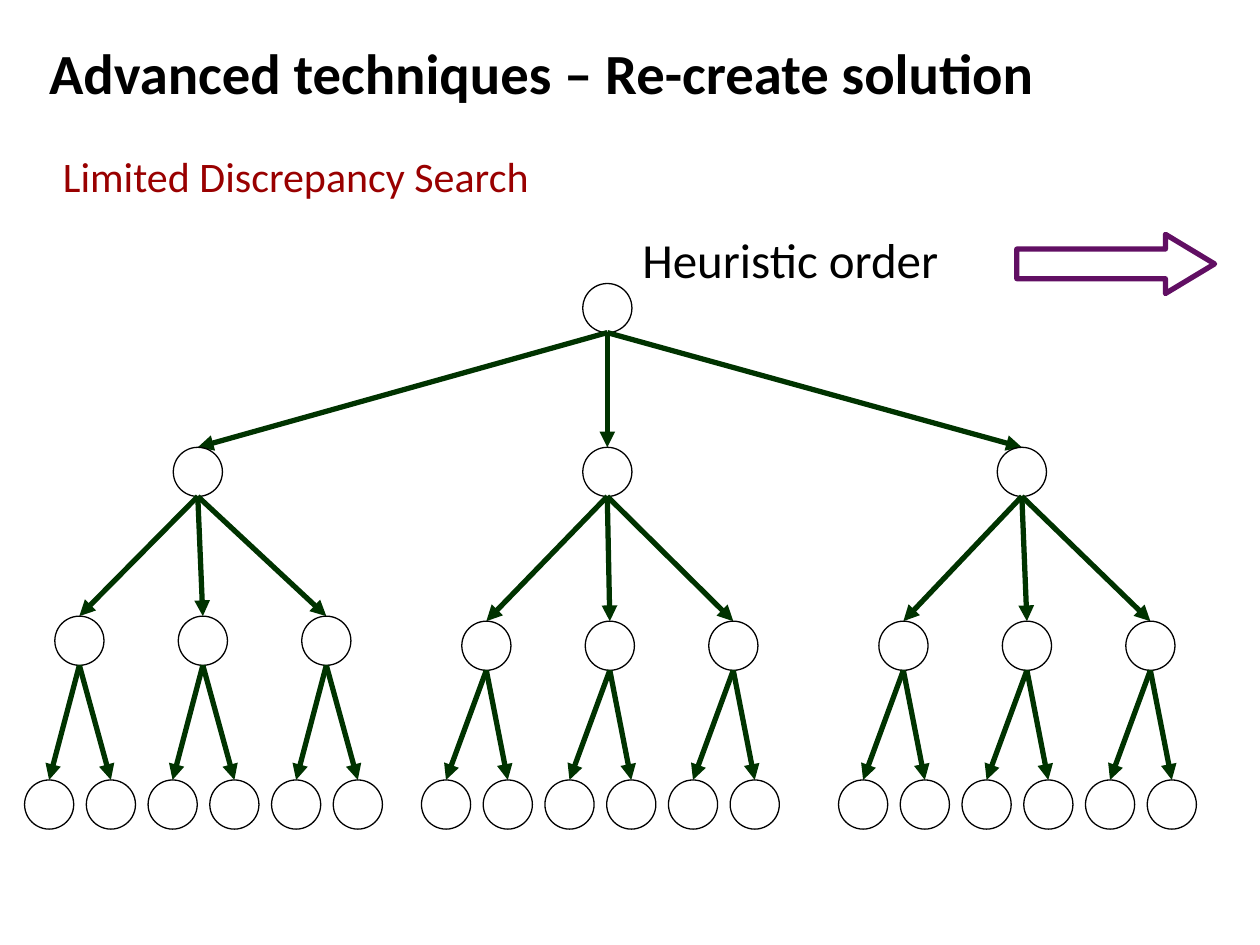
from dataclasses import dataclass

from lxml.etree import SubElement
from pptx import Presentation
from pptx.dml.color import RGBColor
from pptx.enum.shapes import MSO_CONNECTOR, MSO_SHAPE
from pptx.enum.text import MSO_ANCHOR
from pptx.oxml.ns import qn
from pptx.util import Inches, Pt


@dataclass(frozen=True)
class Theme:
    font: str = "Calibri"
    ink: str = "000000"
    heading: str = "990000"
    branch: str = "003300"
    arrow: str = "610F63"
    title_size: float = 32.4
    heading_size: float = 24
    label_size: float = 28
    thin: float = 0.75
    thick: float = 3


class TreeSlide:
    def __init__(self, page, theme):
        self.page = page
        self.theme = theme

    def text(self, words, left, top, width, height, size, color,
             bold=False, inset=(0, 0), spacing=None):
        box = self.page.shapes.add_textbox(
            Inches(left), Inches(top), Inches(width), Inches(height))
        frame = box.text_frame
        frame.word_wrap = True
        frame.vertical_anchor = MSO_ANCHOR.TOP
        frame.margin_left = frame.margin_right = Inches(inset[0])
        frame.margin_top = frame.margin_bottom = Inches(inset[1])
        para = frame.paragraphs[0]
        if spacing:
            para.line_spacing = spacing
        span = para.add_run()
        span.text = words
        span.font.name = self.theme.font
        span.font.size = Pt(size)
        span.font.bold = bold
        span.font.color.rgb = RGBColor.from_string(color)

    def outline(self, kind, left, top, width, height, color, weight):
        shape = self.page.shapes.add_shape(
            kind, Inches(left), Inches(top), Inches(width), Inches(height))
        shape.shadow.inherit = False
        shape.fill.background()
        shape.line.color.rgb = RGBColor.from_string(color)
        shape.line.width = Pt(weight)
        return shape

    def node(self, center, top):
        self.outline(MSO_SHAPE.OVAL, center - NODE / 2, top, NODE, NODE,
                     self.theme.ink, self.theme.thin)

    def branch(self, parent, parent_top, child, child_top):
        line = self.page.shapes.add_connector(
            MSO_CONNECTOR.STRAIGHT, Inches(parent), Inches(parent_top + NODE),
            Inches(child), Inches(child_top))
        line.line.color.rgb = RGBColor.from_string(self.theme.branch)
        line.line.width = Pt(self.theme.thick)
        SubElement(line.line._get_or_add_ln(), qn("a:tailEnd"), type="triangle")
        SubElement(line._element.spPr, qn("a:effectLst"))

    def block_arrow(self, left, top, width, height):
        arrow = self.outline(MSO_SHAPE.RIGHT_ARROW, left, top, width, height,
                             self.theme.arrow, self.theme.thick)
        arrow.adjustments[0] = 0.5
        arrow.adjustments[1] = 0.83


# Tree geometry: horizontal places are node centres, heights are node tops
NODE = 0.39
ROOT, ROOT_TOP = 4.82, 2.25
BRANCH_TOP = 3.55
LEAF_TOP = 6.19
TWIG_STEP, LEAF_STEP = 0.98, 0.49
# Each subtree: branch centre, first twig centre, twig top, first leaf centre
SUBTREES = [
    (1.57, 0.63, 4.89, 0.39),
    (4.82, 3.86, 4.93, 3.54),
    (8.11, 7.17, 4.93, 6.85),
]


def main():
    deck = Presentation()
    deck.slide_width, deck.slide_height = Inches(10), Inches(7.5)
    theme = Theme()
    slide = TreeSlide(deck.slides.add_slide(deck.slide_layouts[6]), theme)

    # Headings
    slide.text("Advanced techniques – Re-create solution", 0.39, 0.3, 8.21, 0.93,
               theme.title_size, theme.ink, bold=True)
    slide.text("Limited Discrepancy Search", 0.5, 1.24, 9, 1.01,
               theme.heading_size, theme.heading, spacing=0.9)

    # Search tree: root, three branches, three twigs each, two leaves each
    slide.node(ROOT, ROOT_TOP)
    for branch, first_twig, twig_top, first_leaf in SUBTREES:
        slide.branch(ROOT, ROOT_TOP, branch, BRANCH_TOP)
        slide.node(branch, BRANCH_TOP)
        for i in range(3):
            twig = first_twig + i * TWIG_STEP
            slide.branch(branch, BRANCH_TOP, twig, twig_top)
            slide.node(twig, twig_top)
            for j in range(2):
                leaf = first_leaf + (2 * i + j) * LEAF_STEP
                slide.branch(twig, twig_top, leaf, LEAF_TOP)
                slide.node(leaf, LEAF_TOP)

    # Direction of the heuristic
    slide.text("Heuristic order", 5, 1.77, 3.15, 0.57, theme.label_size,
               theme.ink, inset=(0.1, 0.05))
    slide.block_arrow(8.07, 1.86, 1.57, 0.47)

    deck.save("out.pptx")


if __name__ == "__main__":
    main()
